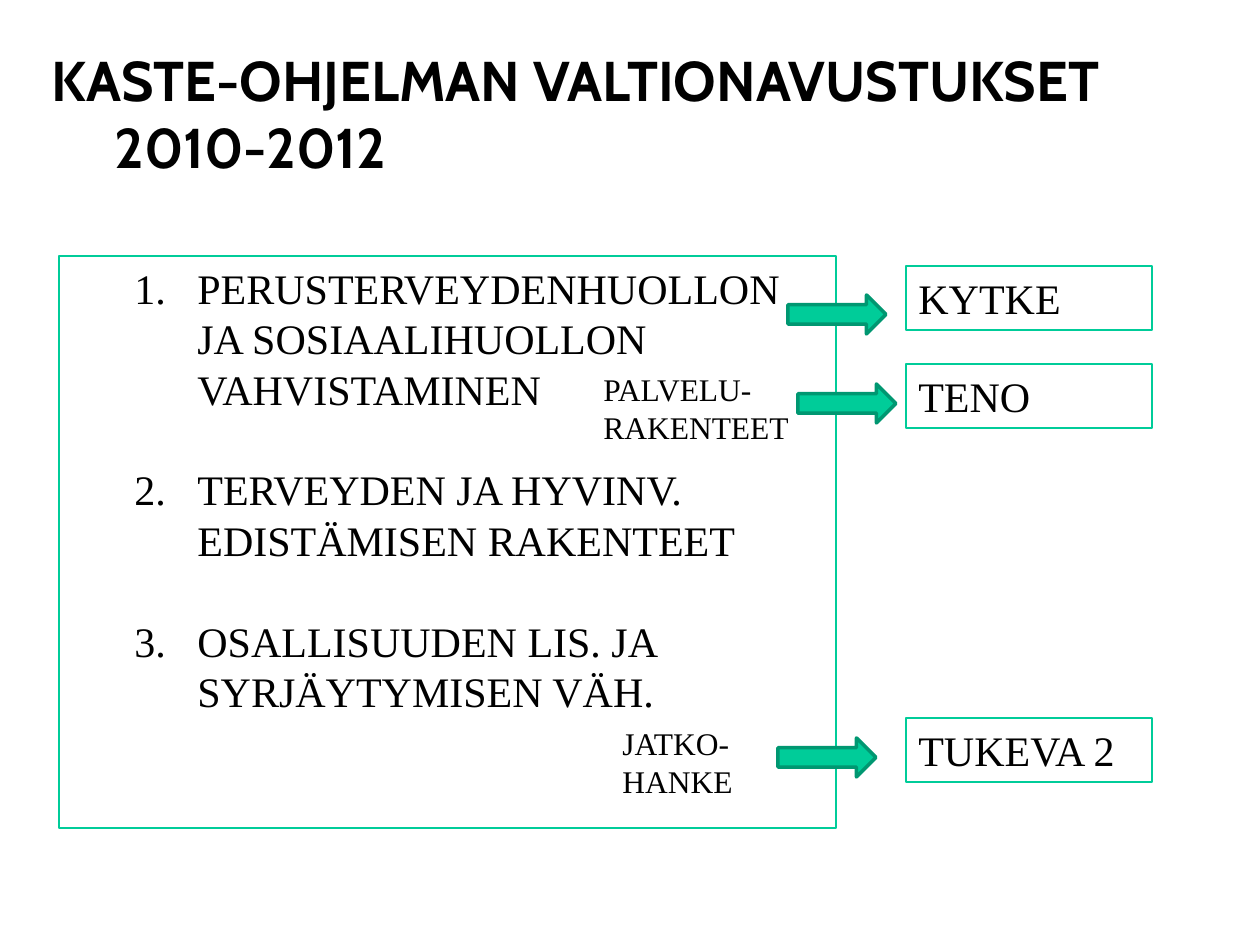
from dataclasses import dataclass

from lxml import etree
from pptx import Presentation
from pptx import util as u
from pptx.dml.color import RGBColor
from pptx.enum import shapes, text
from pptx.oxml.ns import qn

PX = u.Inches(1) // 126
BLACK = RGBColor(0x00, 0x00, 0x00)
GREEN = RGBColor(0x00, 0xCC, 0x99)
DARK_GREEN = RGBColor(0x00, 0x97, 0x71)
SERIF = "Times New Roman"


@dataclass
class Box:
    left: int
    top: int
    width: int
    height: int

    def emu(self) -> list[int]:
        return [v * PX for v in (self.left, self.top, self.width, self.height)]


@dataclass
class Label:
    box: Box
    lines: list[str]
    size: int = 24
    framed: bool = True


GOALS = Label(Box(59, 256, 777, 572), [
    "PERUSTERVEYDENHUOLLON JA SOSIAALIHUOLLON VAHVISTAMINEN",
    "TERVEYDEN JA HYVINV. EDISTÄMISEN RAKENTEET",
    "OSALLISUUDEN LIS. JA SYRJÄYTYMISEN VÄH.",
])
PROJECTS = [
    Label(Box(906, top, 246, 64), [name])
    for name, top in [("KYTKE", 266), ("TENO", 364), ("TUKEVA 2", 718)]
]
NOTES = [
    Label(Box(591, 364, 266, 89), ["PALVELU-", "RAKENTEET"], 18, False),
    Label(Box(610, 718, 178, 89), ["JATKO-HANKE"], 18, False),
]
ARROWS = [Box(left, top, 98, 39) for left, top in [(788, 295), (798, 384), (778, 738)]]


def write(frame, lines: list[str], font: str, size: int, bold: bool = False) -> None:
    frame.word_wrap = True
    frame.auto_size = text.MSO_AUTO_SIZE.NONE
    frame.vertical_anchor = text.MSO_ANCHOR.TOP
    frame.text = "\n".join(lines)
    for paragraph in frame.paragraphs:
        paragraph.alignment = text.PP_ALIGN.LEFT
        paragraph.font.name = font
        paragraph.font.size = u.Pt(size)
        paragraph.font.bold = bold
        paragraph.font.color.rgb = BLACK


def add_label(slide, label: Label):
    if label.framed:
        shape = slide.shapes.add_shape(shapes.MSO_SHAPE.RECTANGLE, *label.box.emu())
        shape.shadow.inherit = False
        shape.fill.background()
        shape.line.color.rgb = GREEN
        shape.line.width = u.Pt(0.75)
    else:
        shape = slide.shapes.add_textbox(*label.box.emu())
    write(shape.text_frame, label.lines, SERIF, label.size)
    return shape


def number_items(frame) -> None:
    for index, paragraph in enumerate(frame.paragraphs):
        if index:
            paragraph.space_before = u.Pt(28.8)
        properties = paragraph._p.get_or_add_pPr()
        properties.set("marL", str(u.Inches(1)))
        properties.set("indent", str(-u.Inches(0.5)))
        numbering = etree.Element(qn("a:buAutoNum"), type="arabicPeriod")
        properties.find(qn("a:defRPr")).addprevious(numbering)


def add_arrow(slide, box: Box) -> None:
    arrow = slide.shapes.add_shape(shapes.MSO_SHAPE.RIGHT_ARROW, *box.emu())
    arrow.shadow.inherit = False
    arrow.fill.solid()
    arrow.fill.fore_color.rgb = GREEN
    arrow.line.color.rgb = DARK_GREEN
    arrow.line.width = u.Pt(2)


def main() -> None:
    presentation = Presentation()
    presentation.slide_width, presentation.slide_height = u.Inches(10), u.Inches(7.5)
    slide = presentation.slides.add_slide(presentation.slide_layouts[5])

    # Title
    title = slide.shapes.title
    title.left, title.top, title.width, title.height = Box(39, 39, 1113, 149).emu()
    write(title.text_frame, ["KASTE-OHJELMAN VALTIONAVUSTUKSET", "\t2010-2012"],
          "Cabin", 32, bold=True)

    # Numbered goals
    number_items(add_label(slide, GOALS).text_frame)

    # Projects and notes beside the arrows
    for label in PROJECTS + NOTES:
        add_label(slide, label)

    # Arrows from goals to projects
    for box in ARROWS:
        add_arrow(slide, box)

    presentation.save("out.pptx")


if __name__ == "__main__":
    main()
